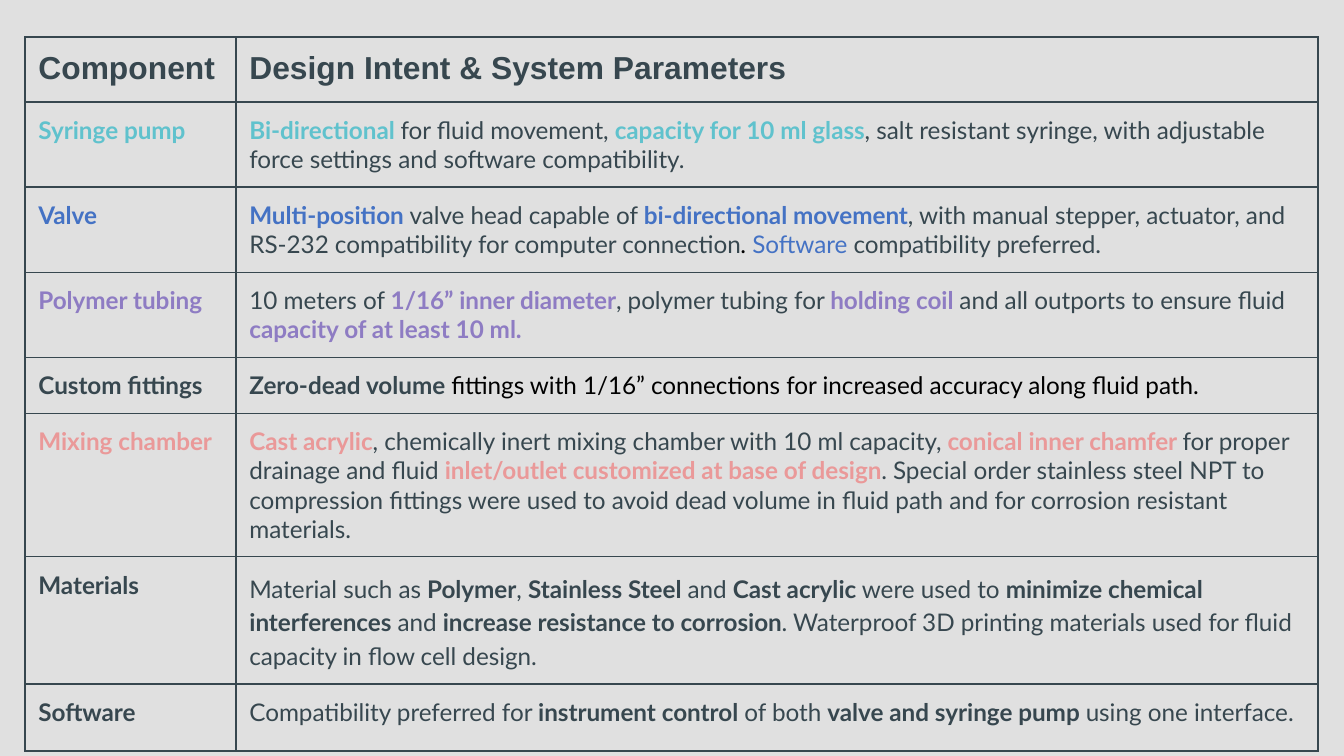
from lxml import etree
from pptx import Presentation
from pptx.dml.color import RGBColor
from pptx.oxml.ns import qn
from pptx.util import Pt

PX = 914400 / 134.4
SLATE = RGBColor(0x37, 0x47, 0x4F)
TEAL = RGBColor(0x60, 0xC2, 0xCD)
BLUE = RGBColor(0x44, 0x72, 0xC4)
PURPLE = RGBColor(0x8E, 0x7C, 0xC3)
PINK = RGBColor(0xEA, 0x99, 0x99)
BLACK = RGBColor(0x00, 0x00, 0x00)
PALE_GREY = RGBColor(0xE0, 0xE0, 0xE0)

SLIDE_SIZE = (1344, 756)
TABLE_ORIGIN = (25, 37)
COLUMN_WIDTHS = (211, 1082)
CELL_MARGIN = 13.44
BORDER_SIDES = ("lnL", "lnR", "lnT", "lnB")

HEADER_FONT = {"name": "Arial", "size": Pt(17)}
BODY_FONT = {"name": "Lato", "size": Pt(13)}

HEADER = ("Component", "Design Intent & System Parameters")
HEADER_HEIGHT = 65

KEY, PLAIN, DARK, TINTED = "key", "plain", "dark", "tinted"

COMPONENTS = [
    ("Syringe pump", TEAL, 85, 1.0, [
        ("Bi-directional ", KEY),
        ("for fluid movement, ", PLAIN),
        ("capacity for 10 ml glass", KEY),
        (", salt resistant syringe, with adjustable force settings and "
         "software compatibility.", PLAIN),
    ]),
    ("Valve", BLUE, 85, 1.0, [
        ("Multi-position ", KEY),
        ("valve head capable of ", PLAIN),
        ("bi-directional movement", KEY),
        (", with manual stepper, actuator, and RS-232 compatibility for "
         "computer connection", PLAIN),
        (". ", DARK),
        ("Software ", TINTED),
        ("compatibility preferred.", PLAIN),
    ]),
    ("Polymer tubing", PURPLE, 85, 1.0, [
        ("10 meters of ", PLAIN),
        ("1/16” inner diameter", KEY),
        (", polymer tubing for ", PLAIN),
        ("holding coil ", KEY),
        ("and all outports to ensure fluid ", PLAIN),
        ("capacity of at least 10 ml.", KEY),
    ]),
    ("Custom fittings", SLATE, 56, 1.0, [
        ("Zero-dead volume", KEY),
        (" fittings with 1/16” connections for increased accuracy along "
         "fluid path.", DARK),
    ]),
    ("Mixing chamber", PINK, 143, 1.0, [
        ("Cast acrylic", KEY),
        (", chemically inert mixing chamber with 10 ml capacity, ", PLAIN),
        ("conical inner chamfer ", KEY),
        ("for proper drainage and fluid ", PLAIN),
        ("inlet/outlet customized at base of design", KEY),
        (". Special order stainless steel NPT to compression fittings were "
         "used to avoid dead volume in fluid path and for corrosion "
         "resistant materials.", PLAIN),
    ]),
    ("Materials", SLATE, 127, 1.15, [
        ("Material such as ", PLAIN),
        ("Polymer", KEY),
        (", ", PLAIN),
        ("Stainless Steel", KEY),
        (" and ", PLAIN),
        ("Cast acrylic", KEY),
        (" were used to ", PLAIN),
        ("minimize chemical interferences", KEY),
        (" and ", PLAIN),
        ("increase resistance to corrosion", KEY),
        (". Waterproof 3D printing materials used for fluid capacity in "
         "flow cell design.", PLAIN),
    ]),
    ("Software", SLATE, 67, 1.0, [
        ("Compatibility preferred for ", PLAIN),
        ("instrument control", KEY),
        (" of both ", PLAIN),
        ("valve and syringe pump", KEY),
        (" using one interface.", PLAIN),
    ]),
]


def px(value):
    return round(value * PX)


def add_borders(cell):
    properties = cell._tc.get_or_add_tcPr()
    for side in BORDER_SIDES:
        line = etree.SubElement(properties, qn(f"a:{side}"), w=str(Pt(0.75)))
        fill = etree.SubElement(line, qn("a:solidFill"))
        etree.SubElement(fill, qn("a:srgbClr"), val=str(SLATE))


def fill_cell(cell, spans, accent, font_format, spacing=1.0):
    add_borders(cell)
    cell.fill.background()
    for side in ("left", "right", "top", "bottom"):
        setattr(cell, f"margin_{side}", px(CELL_MARGIN))
    colours = {KEY: accent, PLAIN: SLATE, DARK: BLACK, TINTED: accent}
    para = cell.text_frame.paragraphs[0]
    para.line_spacing = spacing
    for text, style in spans:
        span = para.add_run()
        span.text = text
        for name, value in {**font_format, "bold": style == KEY}.items():
            setattr(span.font, name, value)
        span.font.color.rgb = colours[style]


def main():
    deck = Presentation()
    deck.slide_width, deck.slide_height = map(px, SLIDE_SIZE)
    page = deck.slides.add_slide(deck.slide_layouts[6])
    page.background.fill.solid()
    page.background.fill.fore_color.rgb = PALE_GREY

    heights = [HEADER_HEIGHT] + [component[2] for component in COMPONENTS]
    extent = (*TABLE_ORIGIN, sum(COLUMN_WIDTHS), sum(heights))
    table = page.shapes.add_table(
        len(heights), len(COLUMN_WIDTHS), *map(px, extent)).table
    table.first_row = table.horz_banding = False
    for column, width in zip(table.columns, COLUMN_WIDTHS):
        column.width = px(width)
    for row, height in zip(table.rows, heights):
        row.height = px(height)

    for column, title in enumerate(HEADER):
        fill_cell(table.cell(0, column), [(title, KEY)], SLATE, HEADER_FONT)
    for row, (name, accent, _, spacing, spans) in enumerate(COMPONENTS, 1):
        fill_cell(table.cell(row, 0), [(name, KEY)], accent, BODY_FONT)
        fill_cell(table.cell(row, 1), spans, accent, BODY_FONT, spacing)

    deck.save("out.pptx")


if __name__ == "__main__":
    main()
